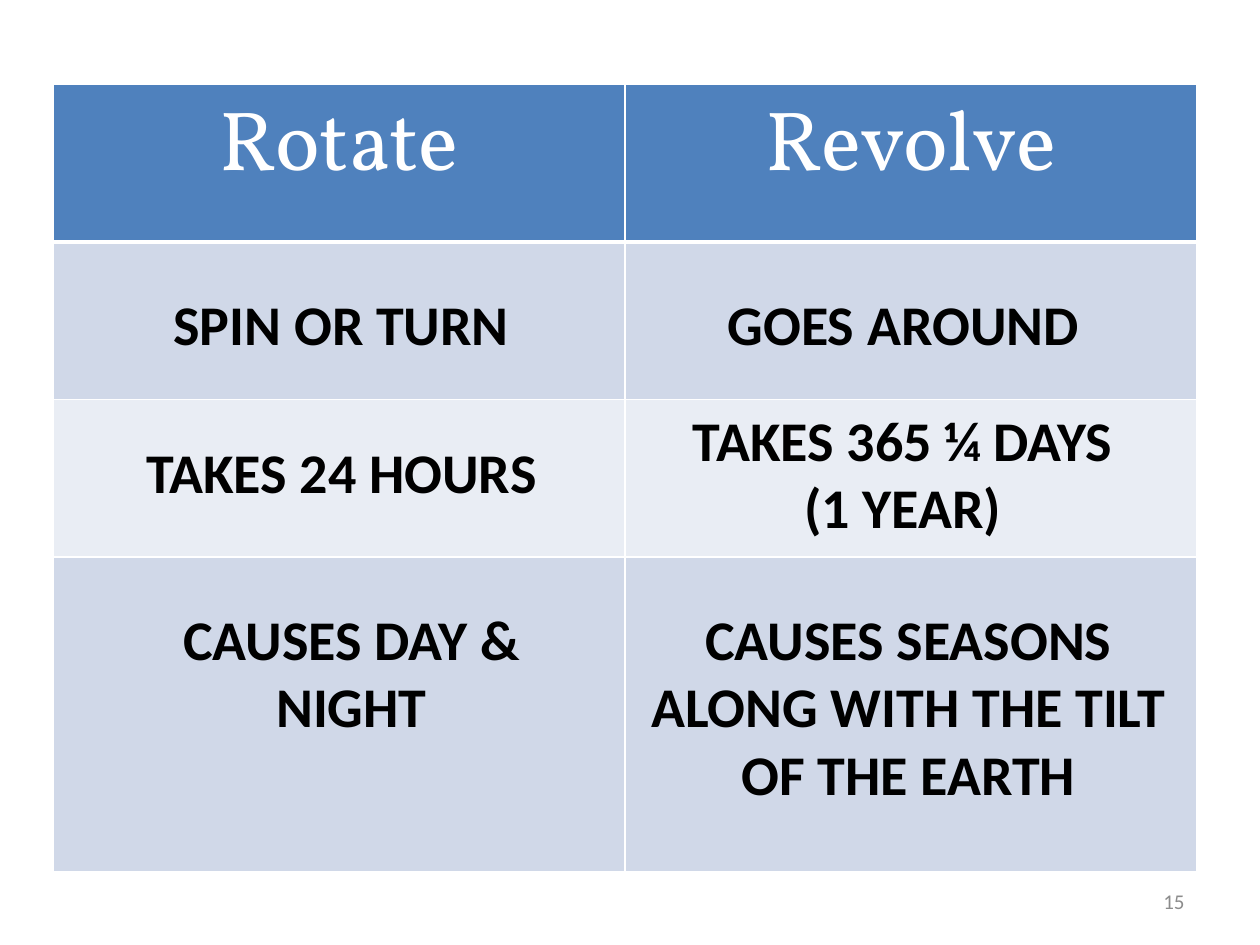
from lxml import etree
from pptx import Presentation
from pptx.dml.color import RGBColor
from pptx.enum.text import MSO_ANCHOR, MSO_AUTO_SIZE, PP_ALIGN
from pptx.oxml.ns import qn
from pptx.util import Inches, Pt

CENTER, RIGHT = PP_ALIGN.CENTER, PP_ALIGN.RIGHT
TOP, MIDDLE = MSO_ANCHOR.TOP, MSO_ANCHOR.MIDDLE
FIT_SHAPE = MSO_AUTO_SIZE.SHAPE_TO_FIT_TEXT

WHITE = RGBColor(0xFF, 0xFF, 0xFF)
BLACK = RGBColor(0, 0, 0)
GRAY = RGBColor(0x8C, 0x8C, 0x8C)
HEADER_BLUE = RGBColor(0x4F, 0x81, 0xBD)
BAND_DARK = RGBColor(0xD0, 0xD8, 0xE8)
BAND_LIGHT = RGBColor(0xE9, 0xED, 0xF4)

HEADINGS = ["Rotate", "Revolve"]
ROW_HEIGHTS = [1.25, 1.25, 1.25, 2.5]
ROW_FILLS = [HEADER_BLUE, BAND_DARK, BAND_LIGHT, BAND_DARK]

# Text and its box: left, top, width, height
FACTS = [
    ("SPIN OR TURN", (1.17, 2.25, 3.08, 0.64)),
    ("TAKES 24 HOURS", (0.67, 3.42, 4.08, 0.64)),
    ("CAUSES DAY & NIGHT", (0.75, 4.75, 4.08, 1.18)),
    ("GOES AROUND", (5.67, 2.25, 3, 0.64)),
    ("TAKES 365 ¼ DAYS (1 YEAR)", (5.25, 3.17, 3.83, 1.18)),
    ("CAUSES SEASONS ALONG WITH THE TILT OF THE EARTH", (4.92, 4.75, 4.58, 1.72)),
]


def write(frame, text, size, font, color, bold=False, align=CENTER):
    paragraph = frame.paragraphs[0]
    paragraph.alignment = align
    run = paragraph.add_run()
    run.text = text
    run.font.size = Pt(size)
    run.font.name = font
    run.font.bold = bold
    run.font.color.rgb = color


def set_borders(cell, color, widths):
    """Line the cell; widths are points for left, right, top and bottom."""
    properties = cell._tc.get_or_add_tcPr()
    for side, width in zip("LRTB", widths):
        line = etree.SubElement(properties, qn(f"a:ln{side}"), w=str(Pt(width)))
        fill = etree.SubElement(line, qn("a:solidFill"))
        etree.SubElement(fill, qn("a:srgbClr"), val=str(color))


def add_comparison_table(slide, left, top, width, height):
    table = slide.shapes.add_table(
        len(ROW_HEIGHTS), len(HEADINGS),
        Inches(left), Inches(top), Inches(width), Inches(height)).table
    for row_index, (row_height, fill) in enumerate(zip(ROW_HEIGHTS, ROW_FILLS)):
        row = table.rows[row_index]
        row.height = Inches(row_height)
        top_line = 3 if row_index == 1 else 1
        bottom_line = 3 if row_index == 0 else 1
        for cell in row.cells:
            set_borders(cell, WHITE, (1, 1, top_line, bottom_line))
            cell.fill.solid()
            cell.fill.fore_color.rgb = fill
    for cell, heading in zip(table.rows[0].cells, HEADINGS):
        write(cell.text_frame, heading, 48, "Vollkorn", WHITE)


def add_label(slide, box, anchor=TOP):
    frame = slide.shapes.add_textbox(*map(Inches, box)).text_frame
    frame.word_wrap = True
    frame.vertical_anchor = anchor
    return frame


def add_fact(slide, text, box):
    frame = add_label(slide, box)
    frame.auto_size = FIT_SHAPE
    write(frame, text, 32, "Calibri", BLACK, bold=True)


def add_page_number(slide, number, box):
    write(add_label(slide, box, MIDDLE), number, 12, "Calibri", GRAY, align=RIGHT)


def main():
    presentation = Presentation()
    presentation.slide_width = Inches(10)
    presentation.slide_height = Inches(7.5)
    slide = presentation.slides.add_slide(presentation.slide_layouts[6])
    add_page_number(slide, "15", (7.17, 6.95, 2.33, 0.4))
    add_comparison_table(slide, 0.42, 0.67, 9.08, sum(ROW_HEIGHTS))
    for text, box in FACTS:
        add_fact(slide, text, box)
    presentation.save("out.pptx")


if __name__ == "__main__":
    main()
